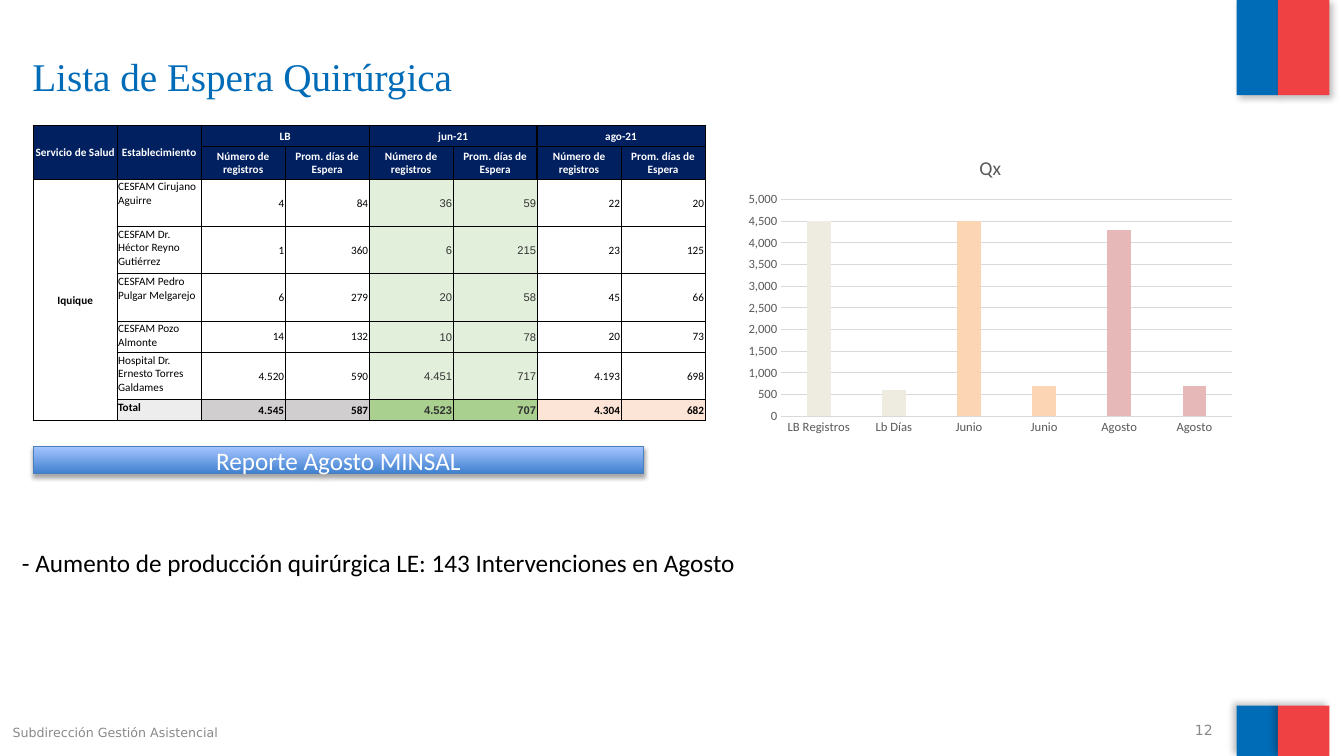
"""Surgical waiting list slide: table, column chart and a summary line."""
from lxml import etree
from pptx import Presentation
from pptx import util as u
from pptx.chart import data as cd
from pptx.dml.color import RGBColor
from pptx.enum import chart as ch, shapes, text
from pptx.oxml import ns

Pt = u.Pt
LEFT, MID, RIGHT = text.PP_ALIGN.LEFT, text.PP_ALIGN.CENTER, text.PP_ALIGN.RIGHT
TOP, HALF = text.MSO_ANCHOR.TOP, text.MSO_ANCHOR.MIDDLE


class Theme:
    blue, red, navy = "006CB7", "EF4144", "002060"
    white, black, ink = "FFFFFF", "000000", "333333"
    grey, axis, grid = "898989", "595959", "D9D9D9"
    dark, light, edge = "3F80CE", "A4C4FF", "4B7EBC"
    mint, label = "E2EFDA", "EDEDED"
    total = ["D0CECE", "A9D08E", "FCE4D6"]
    bars = ["EEECE1", "FCD5B5", "E6B9B8"]
    head, body, cell, foot, page, tick, name = 28, 18, 8, 9, 10, 9, 14
    sans, arial, serif, plain = "Calibri", "Arial", "Times New Roman", "DejaVu Sans"


def style(font, size, hue, face=Theme.sans, bold=False):
    for key, val in {"size": Pt(size), "name": face, "bold": bold}.items():
        setattr(font, key, val)
    font.color.rgb = RGBColor.from_string(hue)


def write(frame, words, align, *look):
    para = frame.paragraphs[0]
    para.alignment = align
    run = para.add_run()
    run.text = words
    style(run.font, *look)


deck = Presentation()
deck.slide_width, deck.slide_height = Pt(960), Pt(540)
slide = deck.slides.add_slide(deck.slide_layouts[6])

blocks = [
    ((883.3, -0.5, 29.5, 68.5), Theme.blue, 25, 5, 3, 45),
    ((912.8, 0, 36.8, 68), Theme.red, 25, 5, 3, 45),
    ((883.3, 504, 29.5, 36), Theme.blue, 25, 5, 3, 215),
    ((912.8, 504, 36.8, 36), Theme.red, 25, 5, 3, 215),
    ((23.75, 319, 436, 19.5), None, 35, 3.1, 1.8, 90),
]
for box, hue, alpha, blur, dist, turn in blocks:
    block = slide.shapes.add_shape(shapes.MSO_SHAPE.RECTANGLE, *map(Pt, box))
    block.shadow.inherit = False
    glow = etree.SubElement(
        block._element.spPr.find(ns.qn("a:effectLst")), ns.qn("a:outerShdw"),
        blurRad=str(Pt(blur)), dist=str(Pt(dist)), dir=str(turn * 60000),
        algn="ctr", rotWithShape="0")
    tint = etree.SubElement(glow, ns.qn("a:srgbClr"), val=Theme.black)
    etree.SubElement(tint, ns.qn("a:alpha"), val=str(alpha * 1000))
    if hue:
        block.fill.solid()
        block.fill.fore_color.rgb = RGBColor.from_string(hue)
        block.line.fill.background()
    else:
        block.fill.gradient()
        block.fill.gradient_angle = 90
        for stop, shade in zip(block.fill.gradient_stops, (Theme.dark, Theme.light)):
            stop.color.rgb = RGBColor.from_string(shade)
        block.line.color.rgb = RGBColor.from_string(Theme.edge)
        block.line.width = Pt(0.75)
        block.text_frame.vertical_anchor = HALF
        write(block.text_frame, "Reporte Agosto MINSAL", MID, Theme.body, Theme.white)

notes = [
    ((16, 34, 857.5, 62), "Lista de Espera Quirúrgica", LEFT, TOP,
     Theme.head, Theme.blue, Theme.serif),
    ((2, 514, 304, 19.5), "Subdirección Gestión Asistencial", LEFT, TOP,
     Theme.foot, Theme.grey, Theme.plain),
    ((649.3, 514, 224, 15), "12", RIGHT, HALF, Theme.page, Theme.grey, Theme.plain),
    ((8.6, 387.5, 942.5, 29),
     "- Aumento de producción quirúrgica LE: 143 Intervenciones en Agosto",
     LEFT, TOP, Theme.body, Theme.black),
]
for box, words, align, anchor, *look in notes:
    frame = slide.shapes.add_textbox(*map(Pt, box)).text_frame
    frame.word_wrap = True
    frame.vertical_anchor = anchor
    write(frame, words, align, *look)

pair = ["Número de registros", "Prom. días de Espera"]
rows = [
    ["Servicio de Salud", "Establecimiento", "LB", "", "jun-21", "", "ago-21", ""],
    ["", ""] + pair * 3,
    ["Iquique", "CESFAM Cirujano Aguirre", "4", "84", "36", "59", "22", "20"],
    ["", "CESFAM Dr. Héctor Reyno Gutiérrez", "1", "360", "6", "215", "23", "125"],
    ["", "CESFAM Pedro Pulgar Melgarejo", "6", "279", "20", "58", "45", "66"],
    ["", "CESFAM Pozo Almonte", "14", "132", "10", "78", "20", "73"],
    ["", "Hospital Dr. Ernesto Torres Galdames",
     "4.520", "590", "4.451", "717", "4.193", "698"],
    ["", "Total", "4.545", "587", "4.523", "707", "4.304", "682"],
]
tall = [15, 23.5, 33.75, 33.75, 33.75, 22.5, 33.75, 15]
table = slide.shapes.add_table(
    8, 8, Pt(23.75), Pt(89.5), Pt(480), Pt(sum(tall))).table
table.first_row = table.horz_banding = False
for col in table.columns:
    col.width = Pt(60)
for row, high in zip(table.rows, tall):
    row.height = Pt(high)

pad = {"margin_left": Pt(0.7), "margin_right": Pt(0.7),
       "margin_top": Pt(0.7), "margin_bottom": 0}
for r, line in enumerate(rows):
    for c, words in enumerate(line):
        cell = table.cell(r, c)
        top, last, june = r < 2, r == 7, c in (4, 5)
        for key, val in pad.items():
            setattr(cell, key, val)
        cell.vertical_anchor = TOP if c == 1 and not top else HALF
        fill = None
        if top:
            fill = Theme.navy
        elif last and c:
            fill = Theme.label if c == 1 else Theme.total[c // 2 - 1]
        elif june:
            fill = Theme.mint
        if fill:
            cell.fill.solid()
            cell.fill.fore_color.rgb = RGBColor.from_string(fill)
        else:
            cell.fill.background()
        if words:
            align = MID if top or c == 0 else LEFT if c == 1 else RIGHT
            hue = Theme.white if top else Theme.ink if june else Theme.black
            face = Theme.arial if june and not top else Theme.sans
            write(cell.text_frame, words, align, Theme.cell, hue, face,
                  top or last or c == 0)
        bold = {"lnL": c == 0 or top and c == 6, "lnR": top and c == 5,
                "lnT": r == 0, "lnB": False}
        prop = cell._tc.get_or_add_tcPr()
        for spot, (tag, wide) in enumerate(bold.items()):
            rule = etree.Element(ns.qn("a:" + tag), w=str(Pt(1 if wide else 0.5)))
            ink = etree.SubElement(rule, ns.qn("a:solidFill"))
            etree.SubElement(ink, ns.qn("a:srgbClr"), val=Theme.black)
            prop.insert(spot, rule)
for r, c, down, over in [(0, 0, 1, 0), (0, 1, 1, 1), (0, 2, 0, 3),
                         (0, 4, 0, 5), (0, 6, 0, 7), (2, 0, 7, 0)]:
    table.cell(r, c).merge(table.cell(down, over))

data = cd.CategoryChartData(number_format="#,##0")
data.categories = ["LB Registros", "Lb Días", "Junio", "Junio", "Agosto", "Agosto"]
data.add_series("Series 1", [4500, 600, 4500, 700, 4300, 700])
wide, high = 360, 216
chart = slide.shapes.add_chart(
    ch.XL_CHART_TYPE.COLUMN_CLUSTERED, Pt(527), Pt(99.5), Pt(wide), Pt(high), data).chart
style(chart.font, Theme.page, Theme.black)
chart.has_legend = False
chart.has_title = True
write(chart.chart_title.text_frame, "Qx", MID, Theme.name, Theme.axis)
plot = chart.plots[0]
plot.gap_width, plot.overlap, plot.vary_by_categories = 219, -27, False
for n in range(6):
    bar = plot.series[0].points[n].format.fill
    bar.solid()
    bar.fore_color.rgb = RGBColor.from_string(Theme.bars[n // 2])

cats, vals = chart.category_axis, chart.value_axis
for axis in (cats, vals):
    axis.major_tick_mark = axis.minor_tick_mark = ch.XL_TICK_MARK.NONE
    style(axis.tick_labels.font, Theme.tick, Theme.axis)
for key, val in {"minimum_scale": 0, "maximum_scale": 5000, "major_unit": 500}.items():
    setattr(vals, key, val)
vals.tick_labels.number_format = "#,##0"
vals.tick_labels.number_format_is_linked = False
vals.format.line.fill.background()
for stroke in (cats.format.line, vals.major_gridlines.format.line):
    stroke.color.rgb = RGBColor.from_string(Theme.grid)
    stroke.width = Pt(0.75)

area = chart._chartSpace.chart.plotArea
places = [
    (chart.chart_title._element,
     {"xMode": "edge", "yMode": "edge", "x": 170 / wide, "y": 8 / high}),
    (area, {"layoutTarget": "inner", "xMode": "edge", "yMode": "edge",
            "x": 31 / wide, "y": 43 / high, "w": 322 / wide, "h": 155 / high}),
]
for part, spots in places:
    lay = part.find(ns.qn("c:layout"))
    if lay is None:
        lay = etree.Element(ns.qn("c:layout"))
        part.insert(0, lay)
    hand = etree.SubElement(lay, ns.qn("c:manualLayout"))
    for key, val in spots.items():
        etree.SubElement(hand, ns.qn("c:" + key), val=str(val))

deck.save("out.pptx")
